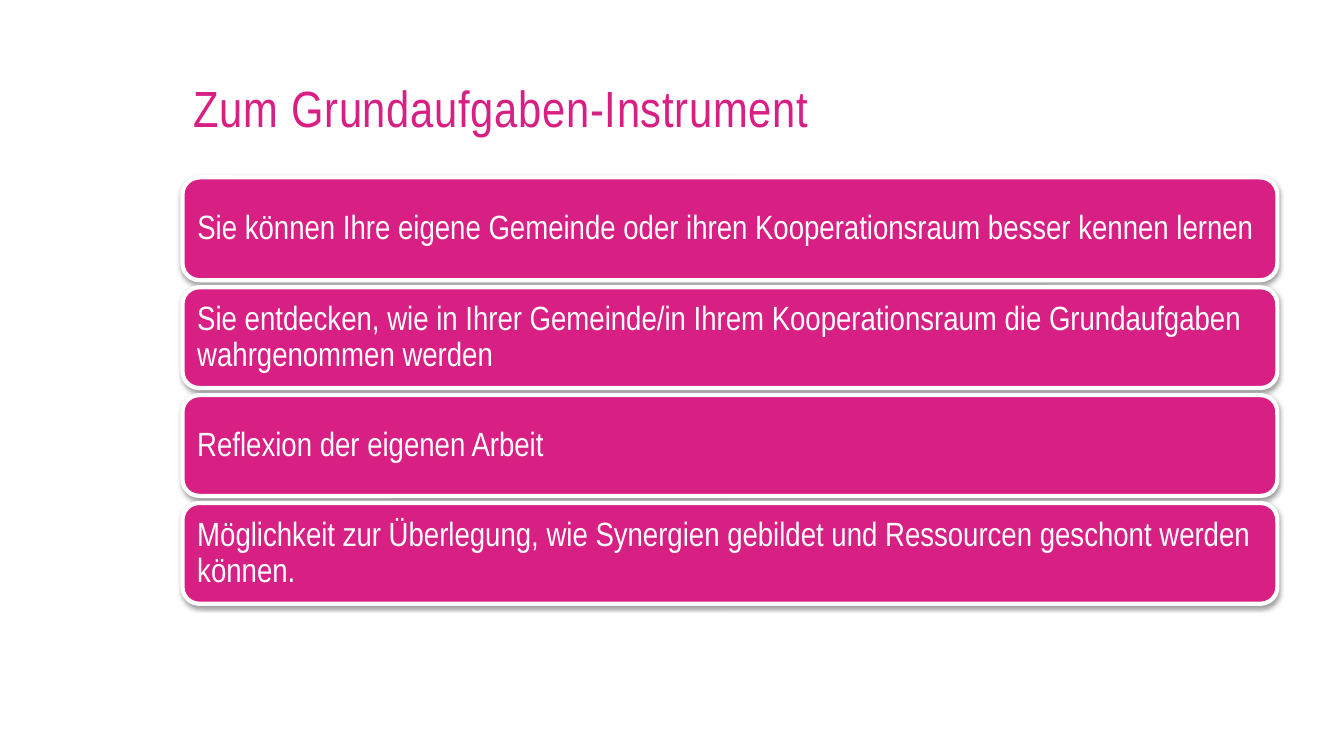
from dataclasses import dataclass

from lxml.etree import SubElement
from pptx import Presentation
from pptx.dml.color import RGBColor
from pptx.enum.shapes import MSO_SHAPE
from pptx.enum.text import MSO_ANCHOR, PP_ALIGN
from pptx.oxml.ns import qn
from pptx.shapes.autoshape import Shape
from pptx.slide import Slide
from pptx.text.text import TextFrame, _Run as Run
from pptx.util import Inches, Pt

FONT = "Arial Narrow"
MAGENTA = "D81F84"
WHITE = "FFFFFF"
LEFT, WIDTH = 1.81, 10.86
BARS_TOP, BAR_GAP = 1.76, 0.07


@dataclass(frozen=True)
class Bar:
    text: str
    height: float = 1.0


BARS = [
    Bar("Sie können Ihre eigene Gemeinde oder ihren Kooperationsraum besser kennen lernen", 1.02),
    Bar("Sie entdecken, wie in Ihrer Gemeinde/in Ihrem Kooperationsraum "
        "die Grundaufgaben wahrgenommen werden"),
    Bar("Reflexion der eigenen Arbeit"),
    Bar("Möglichkeit zur Überlegung, wie Synergien gebildet und Ressourcen "
        "geschont werden können."),
]


def color(hex_code: str) -> RGBColor:
    return RGBColor.from_string(hex_code)


def set_insets(frame: TextFrame, horizontal: float, vertical: float) -> None:
    frame.margin_left = frame.margin_right = Inches(horizontal)
    frame.margin_top = frame.margin_bottom = Inches(vertical)


def add_run(frame: TextFrame, text: str, size: float, hex_code: str) -> Run:
    run = frame.paragraphs[0].add_run()
    run.text = text
    run.font.name = FONT
    run.font.size = Pt(size)
    run.font.color.rgb = color(hex_code)
    return run


def add_soft_shadow(shape: Shape) -> None:
    shape.shadow.inherit = False
    effects = shape._element.spPr.find(qn("a:effectLst"))
    shadow = SubElement(effects, qn("a:outerShdw"), blurRad=str(Pt(3.1)), dist=str(Pt(1.6)),
                        dir="5400000", rotWithShape="0")
    shade = SubElement(shadow, qn("a:srgbClr"), val="000000")
    SubElement(shade, qn("a:alpha"), val="38000")


def add_title(slide: Slide, text: str) -> None:
    box = slide.shapes.add_textbox(Inches(LEFT), Inches(0.7), Inches(WIDTH), Inches(1.35))
    frame = box.text_frame
    frame.word_wrap = True
    set_insets(frame, 0.11, 0.06)
    run = add_run(frame, text, 36.3, MAGENTA)
    run.font._element.set("spc", "50")


def add_bar(slide: Slide, bar: Bar, top: float) -> None:
    shape = slide.shapes.add_shape(MSO_SHAPE.ROUNDED_RECTANGLE, Inches(LEFT), Inches(top),
                                   Inches(WIDTH), Inches(bar.height))
    shape.fill.solid()
    shape.fill.fore_color.rgb = color(MAGENTA)
    shape.line.color.rgb = color(WHITE)
    shape.line.width = Pt(3)
    add_soft_shadow(shape)

    frame = shape.text_frame
    frame.word_wrap = True
    frame.vertical_anchor = MSO_ANCHOR.MIDDLE
    set_insets(frame, 0.1, 0.1)
    paragraph = frame.paragraphs[0]
    paragraph.alignment = PP_ALIGN.LEFT
    paragraph.line_spacing = 0.9
    add_run(frame, bar.text, 24, WHITE)


def main() -> None:
    presentation = Presentation()
    presentation.slide_width = Inches(13.33)
    presentation.slide_height = Inches(7.5)
    slide = presentation.slides.add_slide(presentation.slide_layouts[6])

    add_title(slide, "Zum Grundaufgaben-Instrument")
    top = BARS_TOP
    for bar in BARS:
        add_bar(slide, bar, top)
        top += bar.height + BAR_GAP

    presentation.save("out.pptx")


if __name__ == "__main__":
    main()
